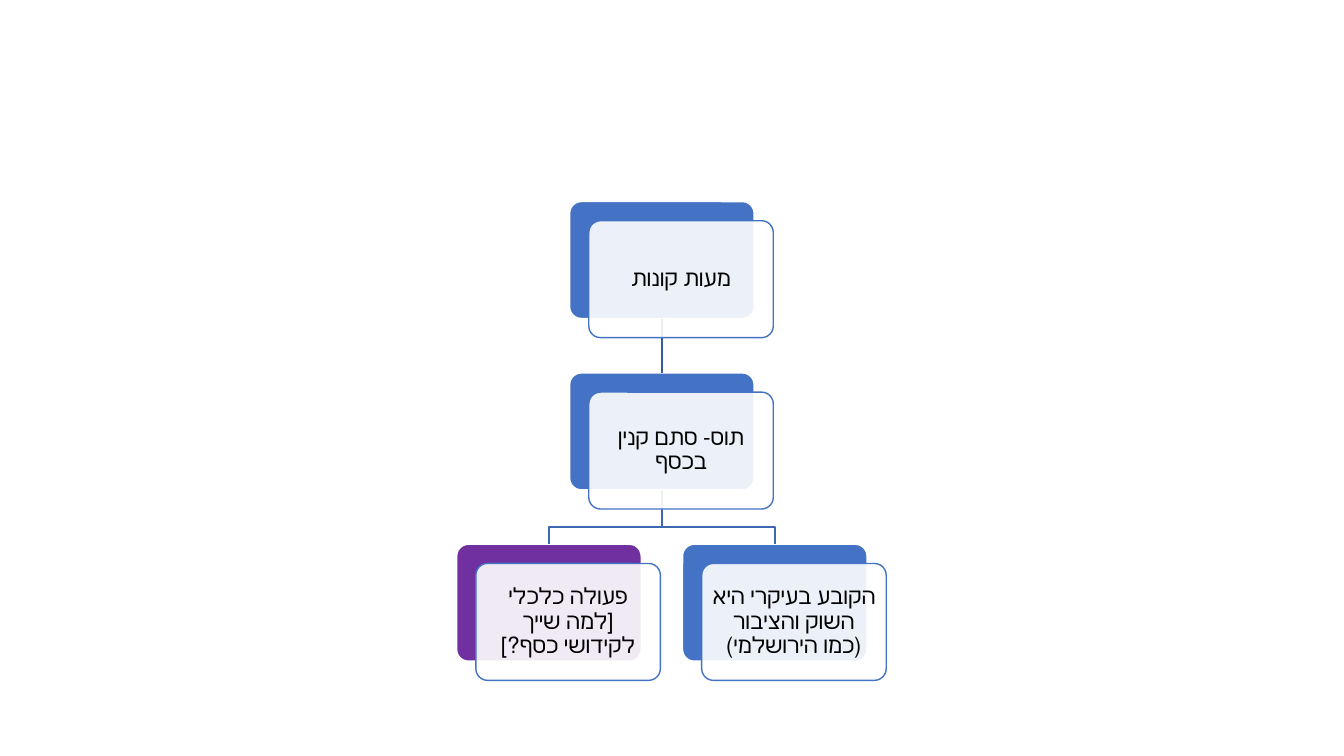
import pptx
import pptx.dml.color
import pptx.enum.shapes
import pptx.enum.text
import pptx.util
from dataclasses import dataclass
from lxml import etree

Inches = pptx.util.Inches
Pt = pptx.util.Pt
SHAPES = pptx.enum.shapes.MSO_SHAPE


@dataclass(frozen=True)
class Theme:
    blue: str = "4472C4"
    purple: str = "7030A0"
    trunk: str = "365B9D"
    branch: str = "3E67B2"
    white: str = "FFFFFF"
    black: str = "000000"
    font: str = "Calibri"
    text_size: int = 16
    line_width: int = 1
    card_opacity: int = 90


class HierarchyPage:
    WIDTH, HEIGHT = 1.83, 1.16
    OFFSET = 0.19  # shift of the front card from its back panel
    BEND = 0.37  # drop from a panel to the bend of a branch
    INSET = 0.07

    def __init__(self, deck, theme):
        self.theme = theme
        self.page = deck.slides.add_slide(deck.slide_layouts[6])

    def color(self, value):
        return pptx.dml.color.RGBColor.from_string(value)

    def outline(self, item, value):
        item.line.color.rgb = self.color(value)
        item.line.width = Pt(self.theme.line_width)

    def rounded(self, left, top, fill, line):
        box = self.page.shapes.add_shape(
            SHAPES.ROUNDED_RECTANGLE, Inches(left), Inches(top),
            Inches(self.WIDTH), Inches(self.HEIGHT))
        box.adjustments[0] = 0.1
        box.shadow.inherit = False
        box.fill.solid()
        box.fill.fore_color.rgb = self.color(fill)
        self.outline(box, line)
        return box

    def panel(self, left, top, fill):
        return self.rounded(left, top, fill, self.theme.white)

    def trunk(self, parent, child):
        link = self.page.shapes.add_connector(
            pptx.enum.shapes.MSO_CONNECTOR.STRAIGHT, 0, 0, 0, 0)
        link.begin_connect(parent, 2)
        link.end_connect(child, 0)
        self.outline(link, self.theme.trunk)
        etree.SubElement(link.element.spPr, pptx.oxml.ns.qn("a:effectLst"))

    def branch(self, parent, child):
        start_x = parent.left + parent.width // 2
        start_y = parent.top + parent.height
        end_x = child.left + child.width // 2
        bend_y = start_y + Inches(self.BEND)
        builder = self.page.shapes.build_freeform(start_x, start_y)
        builder.add_line_segments(
            [(start_x, bend_y), (end_x, bend_y), (end_x, child.top)], close=False)
        link = builder.convert_to_shape()
        link.shadow.inherit = False
        link.fill.background()
        self.outline(link, self.theme.branch)

    def card(self, left, top, text):
        theme = self.theme
        box = self.rounded(left + self.OFFSET, top + self.OFFSET, theme.white, theme.blue)
        # Let the back panel show through
        fill_color = box.element.spPr.find(".//" + pptx.oxml.ns.qn("a:srgbClr"))
        alpha = etree.SubElement(fill_color, pptx.oxml.ns.qn("a:alpha"))
        alpha.set("val", str(theme.card_opacity * 1000))

        frame = box.text_frame
        frame.word_wrap = True
        frame.vertical_anchor = pptx.enum.text.MSO_ANCHOR.MIDDLE
        frame.margin_left = frame.margin_right = Inches(self.INSET)
        frame.margin_top = frame.margin_bottom = Inches(self.INSET)
        frame.text = text
        para = frame.paragraphs[0]
        para.alignment = pptx.enum.text.PP_ALIGN.CENTER
        para.line_spacing = 0.9
        para._p.get_or_add_pPr().set("rtl", "1")
        for span in para.runs:
            span.font.name = theme.font
            span.font.size = Pt(theme.text_size)
            span.font.color.rgb = self.color(theme.black)


def main():
    deck = pptx.Presentation()
    deck.slide_width, deck.slide_height = Inches(13.33), Inches(7.5)
    theme = Theme()
    chart = HierarchyPage(deck, theme)

    # Tree positions: three levels, the last split around the centre
    center, half_gap = 5.65, 1.12
    levels = [2 + 1.7 * level for level in range(3)]
    nodes = [
        (center, levels[0], theme.blue, "מעות קונות"),
        (center, levels[1], theme.blue, "תוס- סתם קנין בכסף"),
        (center + half_gap, levels[2], theme.blue,
         "הקובע בעיקרי היא השוק והציבור (כמו הירושלמי)"),
        (center - half_gap, levels[2], theme.purple,
         "פעולה כלכלי [למה שייך לקידושי כסף?]"),
    ]

    # Back panels
    root, middle, right, left = [chart.panel(x, y, fill) for x, y, fill, _ in nodes]

    # Links, beneath the cards
    chart.branch(middle, left)
    chart.branch(middle, right)
    chart.trunk(root, middle)

    # Front cards with text
    for x, y, _, text in nodes:
        chart.card(x, y, text)

    deck.save("out.pptx")


if __name__ == "__main__":
    main()
